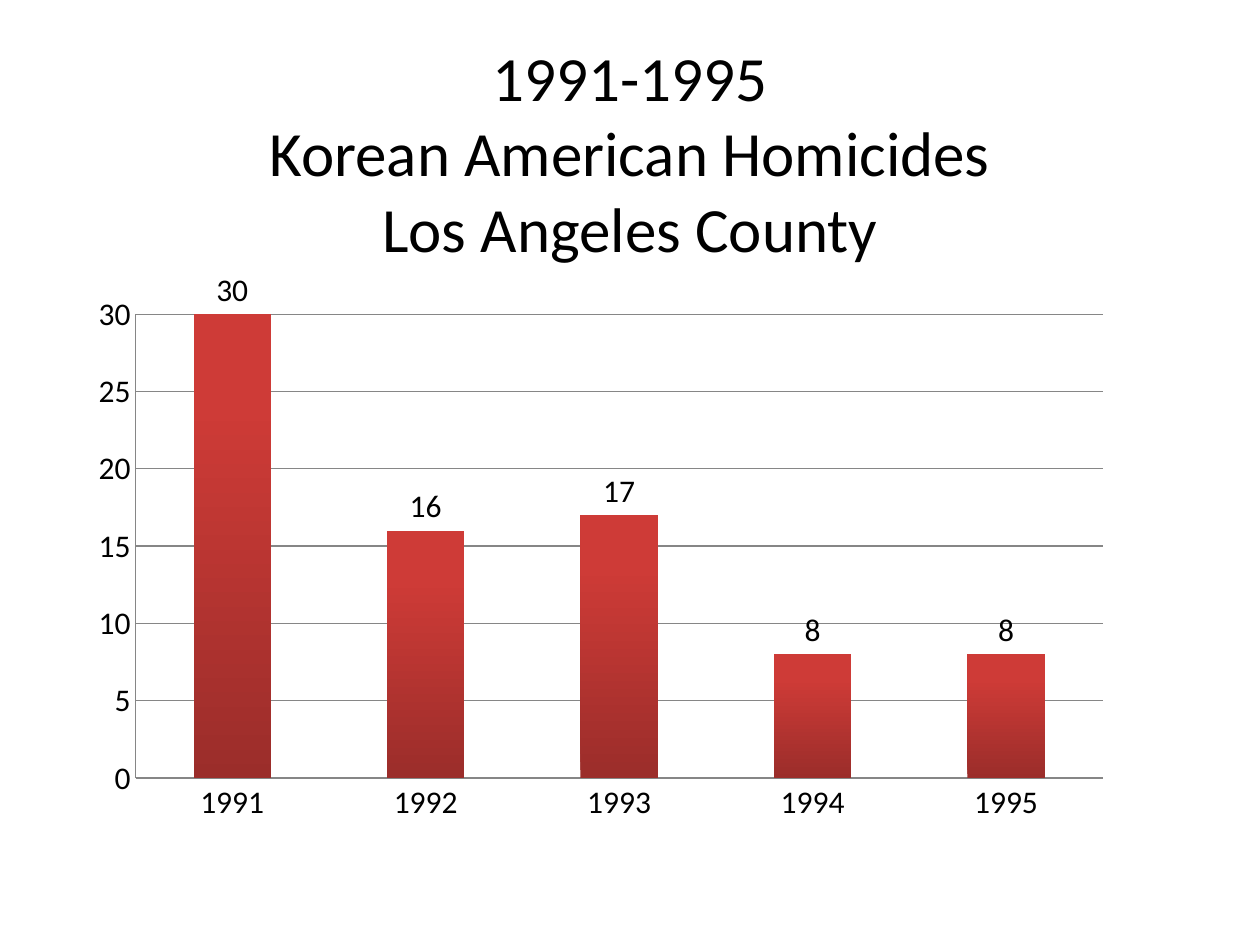
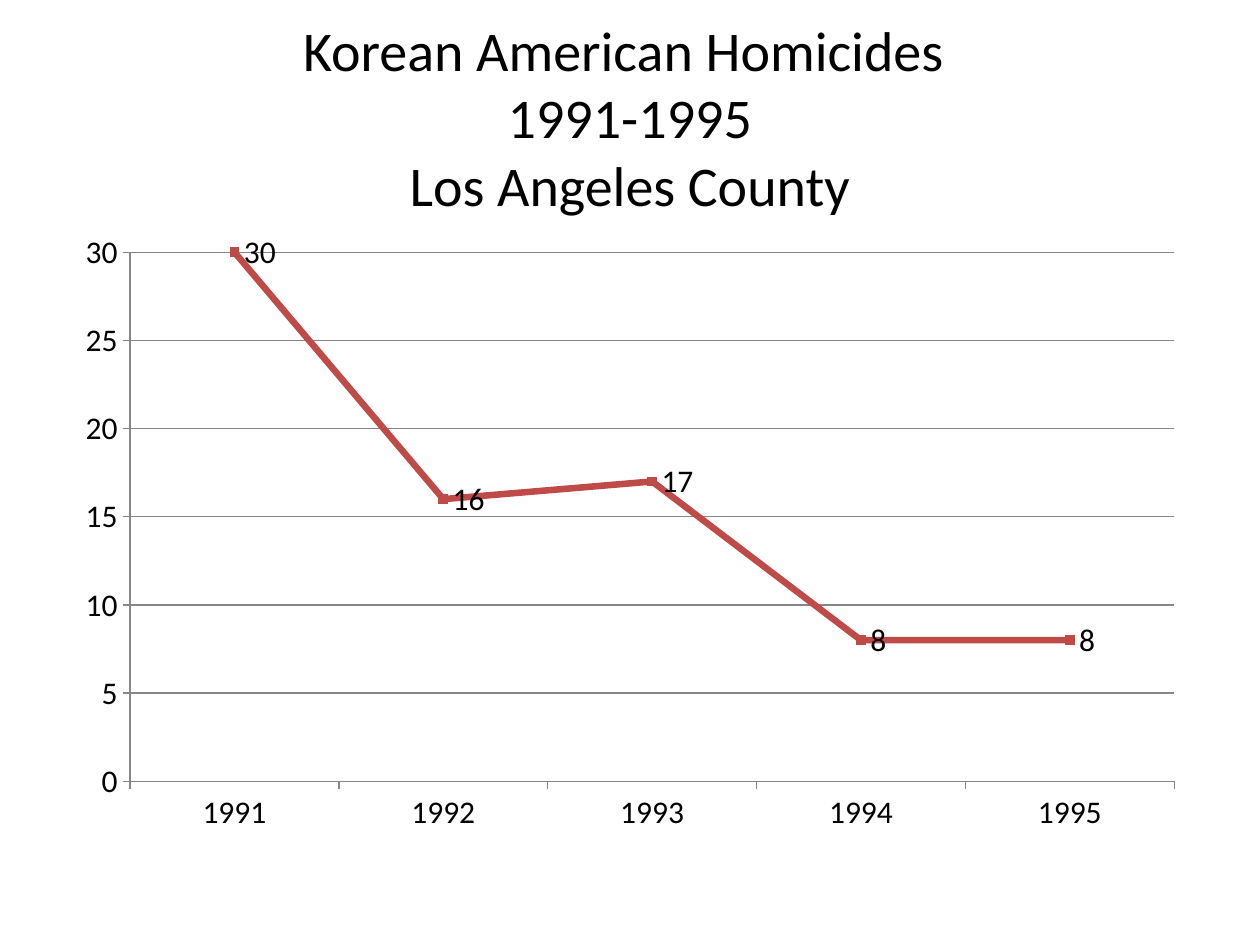
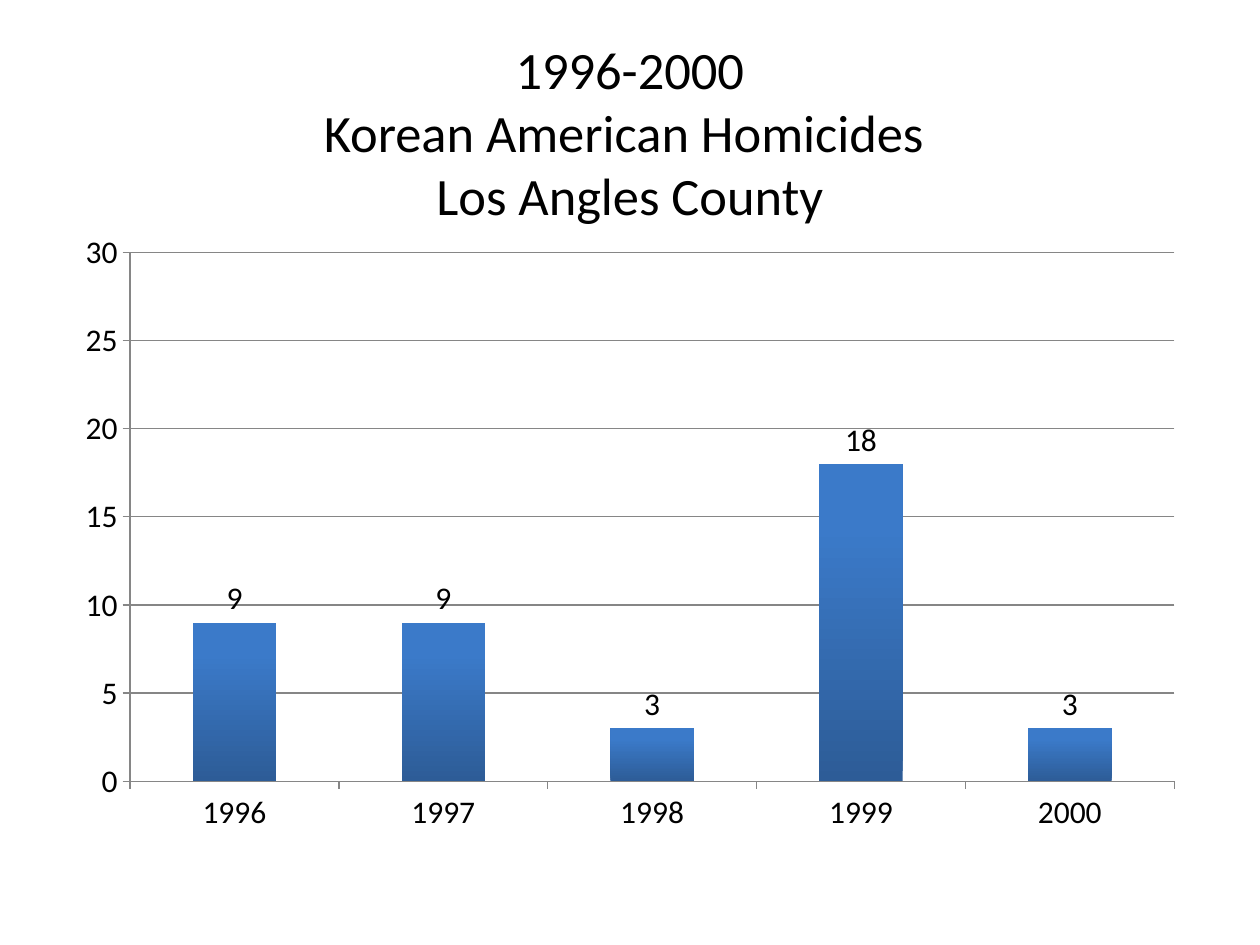
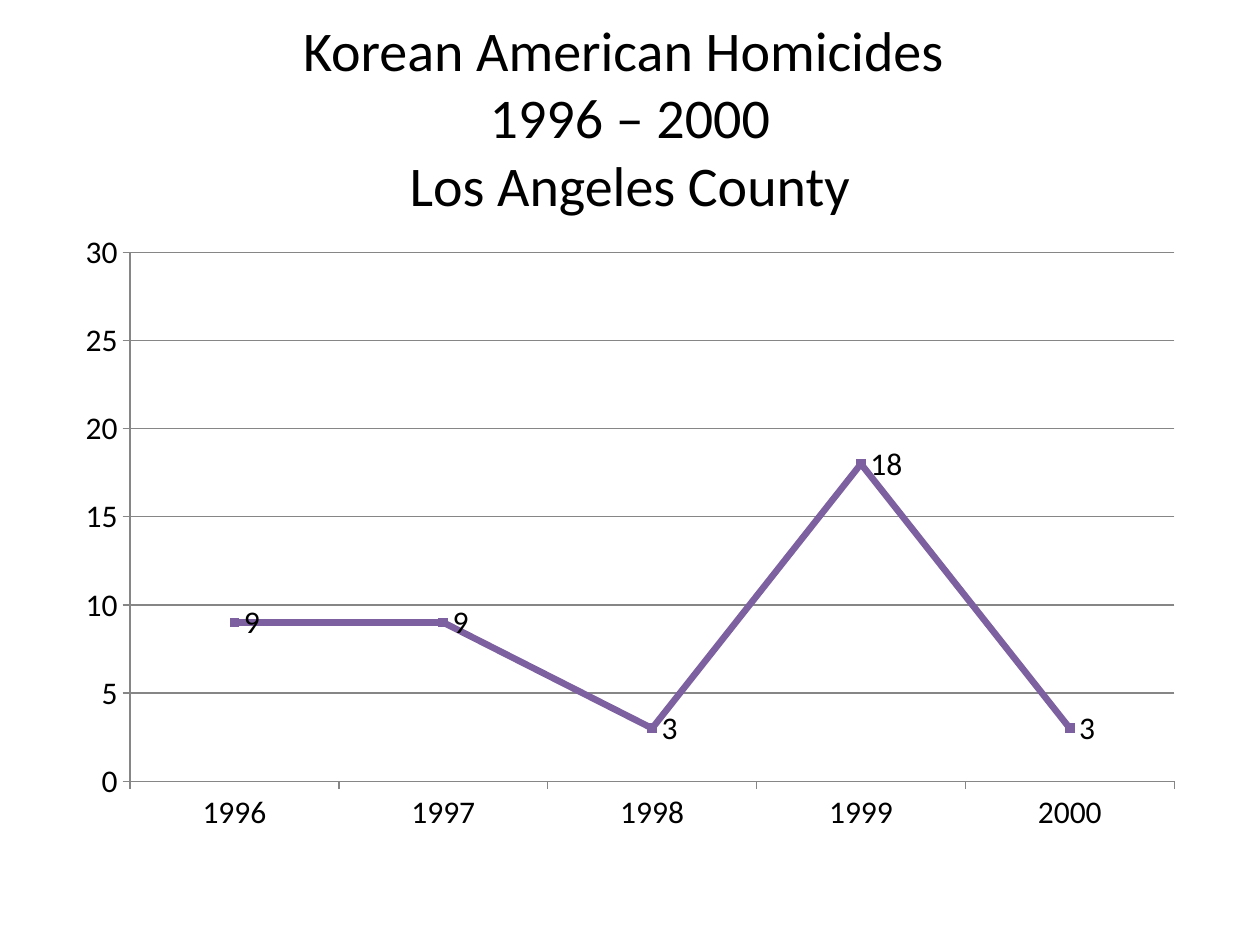
import pptx
import pptx.chart.data
import pptx.dml.color
import pptx.enum.chart
import pptx.enum.text
import pptx.oxml
import pptx.util

Cm, Pt = pptx.util.Cm, pptx.util.Pt
RGBColor = pptx.dml.color.RGBColor
XL = pptx.enum.chart

# Shared look
FONT = "Calibri"
BLACK = RGBColor(0x00, 0x00, 0x00)
GREY = RGBColor(0x86, 0x86, 0x86)
RED_DARK, RED_LIGHT = RGBColor(0x9B, 0x2D, 0x2A), RGBColor(0xCE, 0x3B, 0x37)
BLUE_DARK, BLUE_LIGHT = RGBColor(0x2D, 0x5C, 0x97), RGBColor(0x3B, 0x7A, 0xC9)
RED_LINE = RGBColor(0xBE, 0x4B, 0x48)
PURPLE_LINE = RGBColor(0x7D, 0x60, 0xA0)

LEFT, WIDTH = Cm(1.27), Cm(22.86)
TITLE_HEIGHT = Cm(3.18)
CHART_TOP, CHART_HEIGHT = Cm(4.45), Cm(12.57)

# Homicides per year
EARLY = {"1991": 30, "1992": 16, "1993": 17, "1994": 8, "1995": 8}
LATE = {"1996": 9, "1997": 9, "1998": 3, "1999": 18, "2000": 3}


def set_attrs(obj, values):
    for name, value in values.items():
        setattr(obj, name, value)


def set_font(font, size):
    set_attrs(font, {"name": FONT, "size": Pt(size)})
    font.color.rgb = BLACK


def add_title(s, text, top, size):
    tf = s.shapes.add_textbox(LEFT, top, WIDTH, TITLE_HEIGHT).text_frame
    set_attrs(tf, {"word_wrap": True,
                   "vertical_anchor": pptx.enum.text.MSO_ANCHOR.MIDDLE})
    p = tf.paragraphs[0]
    p.alignment = pptx.enum.text.PP_ALIGN.CENTER
    p.text = text.replace("\n", "\v")
    for r in p.runs:
        set_font(r.font, size)


def set_line(line, color, width):
    line.color.rgb = color
    line.width = Pt(width)


def style_axes(chart, tick):
    for axis in (chart.category_axis, chart.value_axis):
        set_attrs(axis, {"major_tick_mark": tick,
                         "minor_tick_mark": XL.XL_TICK_MARK.NONE})
        set_line(axis.format.line, GREY, 0.75)
    chart.category_axis.has_major_gridlines = False
    set_attrs(chart.value_axis, {"minimum_scale": 0, "maximum_scale": 30,
                                 "major_unit": 5, "has_major_gridlines": True})
    set_line(chart.value_axis.major_gridlines.format.line, GREY, 0.75)


def add_chart(s, kind, counts, label_position, tick):
    data = pptx.chart.data.CategoryChartData()
    data.categories = list(counts)
    data.add_series("Series 1", list(counts.values()))
    chart = s.shapes.add_chart(kind, LEFT, CHART_TOP, WIDTH, CHART_HEIGHT, data).chart
    set_attrs(chart, {"has_title": False, "has_legend": False})
    set_font(chart.font, 18)
    style_axes(chart, tick)
    plot = chart.plots[0]
    set_attrs(plot, {"vary_by_categories": False, "has_data_labels": True})
    set_attrs(plot.data_labels, {"show_value": True, "position": label_position})
    set_font(plot.data_labels.font, 18)
    return chart


def add_column_chart(s, counts, dark, light, tick=XL.XL_TICK_MARK.OUTSIDE):
    chart = add_chart(s, XL.XL_CHART_TYPE.COLUMN_CLUSTERED, counts,
                      XL.XL_LABEL_POSITION.OUTSIDE_END, tick)
    plot = chart.plots[0]
    plot.gap_width = 150
    fill = plot.series[0].format.fill
    fill.gradient()
    fill.gradient_angle = 90
    for stop, color, position in zip(fill.gradient_stops, (dark, light), (0, 0.8)):
        stop.color.rgb = color
        stop.position = position
    return chart


def add_line_chart(s, counts, color):
    chart = add_chart(s, XL.XL_CHART_TYPE.LINE_MARKERS, counts,
                      XL.XL_LABEL_POSITION.RIGHT, XL.XL_TICK_MARK.OUTSIDE)
    series = chart.plots[0].series[0]
    series.smooth = False
    set_line(series.format.line, color, 3.75)
    marker = series.marker
    set_attrs(marker, {"style": XL.XL_MARKER_STYLE.SQUARE, "size": 5})
    marker.format.fill.solid()
    marker.format.fill.fore_color.rgb = color
    set_line(marker.format.line, color, 0.75)


def place_plot(chart, x, y, w, h):
    """Fix the inner plot area, in fractions of the chart."""
    area = chart._chartSpace.chart.plotArea
    for old in area.xpath("c:layout"):
        area.remove(old)
    parts = "".join(f'<c:{tag} val="{value}"/>' for tag, value in (
        ("layoutTarget", "inner"), ("xMode", "edge"), ("yMode", "edge"),
        ("x", x), ("y", y), ("w", w), ("h", h)))
    area.insert(0, pptx.oxml.parse_xml(
        '<c:layout xmlns:c="http://schemas.openxmlformats.org/drawingml/2006/chart">'
        f"<c:manualLayout>{parts}</c:manualLayout></c:layout>"))


def main():
    prs = pptx.Presentation()
    set_attrs(prs, {"slide_width": Cm(25.4), "slide_height": Cm(19.05)})

    def new_slide(title, top, size):
        s = prs.slides.add_slide(prs.slide_layouts[6])
        add_title(s, title, Cm(top), size)
        return s

    # 1991-1995: columns, then trend
    s = new_slide("1991-1995\nKorean American Homicides\nLos Angeles County", 1.47, 36)
    chart = add_column_chart(s, EARLY, RED_DARK, RED_LIGHT, XL.XL_TICK_MARK.NONE)
    place_plot(chart, 0.064, 0.15, 0.853, 0.744)

    s = new_slide("Korean American Homicides \n1991-1995\nLos Angeles County", 0.76, 32)
    add_line_chart(s, EARLY, RED_LINE)

    # 1996-2000: columns, then trend
    s = new_slide("1996-2000\nKorean American Homicides \nLos Angles County", 1.07, 30)
    add_column_chart(s, LATE, BLUE_DARK, BLUE_LIGHT)

    s = new_slide("Korean American Homicides \n1996 – 2000\nLos Angeles County", 0.76, 32)
    add_line_chart(s, LATE, PURPLE_LINE)

    prs.save("out.pptx")


if __name__ == "__main__":
    main()
